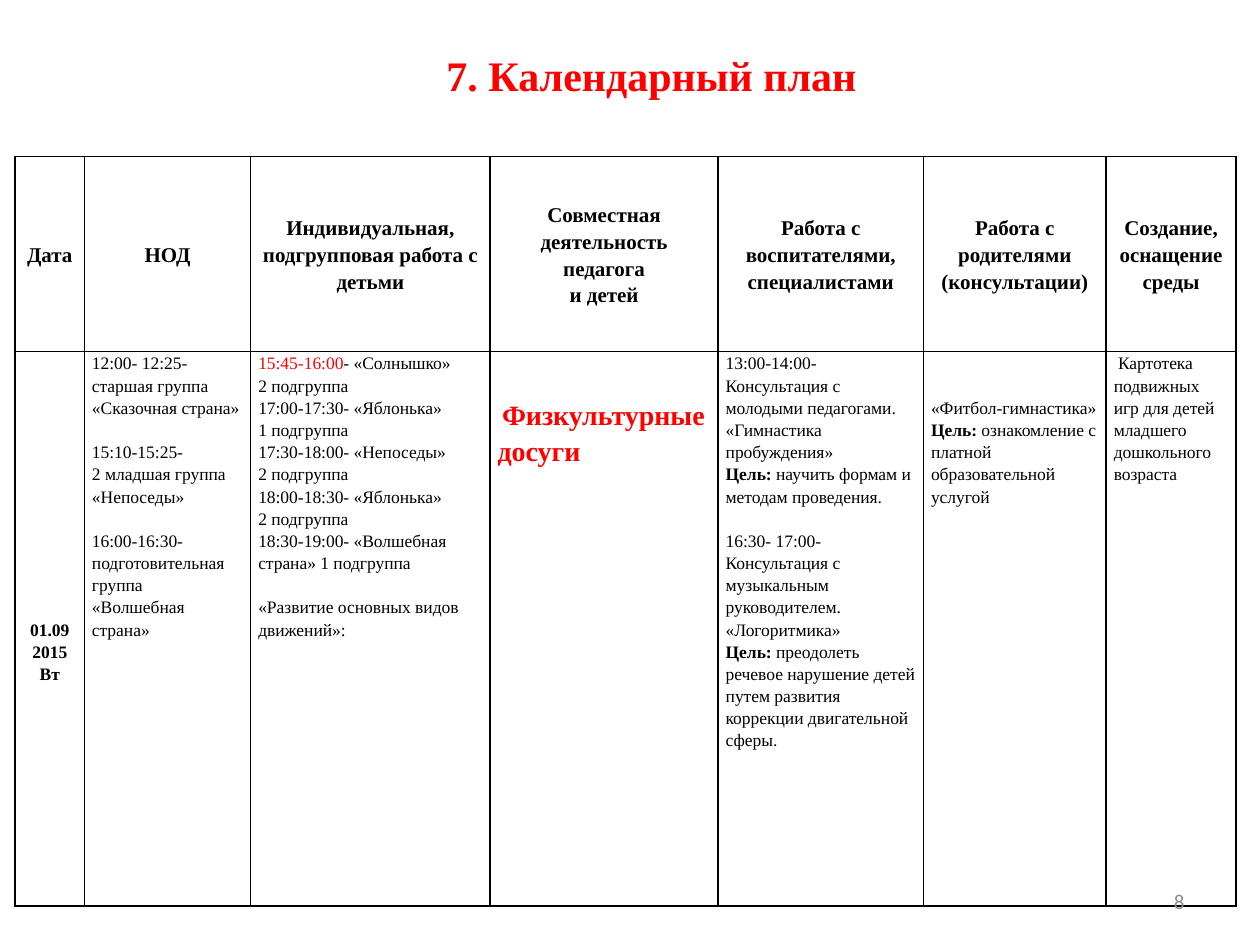
from dataclasses import dataclass, field

from lxml.etree import SubElement
from pptx import Presentation
from pptx.dml.color import RGBColor
from pptx.enum.text import MSO_ANCHOR as Anchor, PP_ALIGN as Align
from pptx.oxml.ns import qn
from pptx.util import Inches, Pt

RED = RGBColor(0xFF, 0x00, 0x00)
BLACK = RGBColor(0x00, 0x00, 0x00)
WHITE = RGBColor(0xFF, 0xFF, 0xFF)
GRAY = RGBColor(0x8C, 0x8C, 0x8C)

SERIF = "Times New Roman"
LINE = 12.7  # points taken by one line of table text
SPACING = 1.15

COLUMNS = [0.55, 1.32, 1.9, 1.81, 1.63, 1.45, 1.03]
ROWS = [1.55, 4.4]


@dataclass
class Line:
    """One paragraph: runs of (text, format), lines of gap above, first-line indent."""
    runs: list
    gap: int = 0
    indent: float = 0


@dataclass
class Entry:
    """One table cell: its paragraphs, the lines left free on top, its format."""
    lines: list
    skip: int = 0
    anchor: Anchor = Anchor.TOP
    align: Align = Align.LEFT
    font: dict = field(default_factory=lambda: {"size": Pt(10), "bold": False})


def plain(text, gap=0, indent=0):
    return Line([(text, {})], gap, indent)


def goal(text):
    return Line([("Цель:", {"bold": True}), (" " + text, {})])


def heading(*texts):
    return Entry([plain(text) for text in texts], anchor=Anchor.MIDDLE,
                 align=Align.CENTER, font={"size": Pt(12), "bold": True})


HEADINGS = [
    heading("Дата"),
    heading("НОД"),
    heading("Индивидуальная, подгрупповая работа с детьми"),
    heading("Совместная деятельность педагога", "и детей"),
    heading("Работа с воспитателями, специалистами"),
    heading("Работа с родителями", "(консультации)"),
    heading("Создание, оснащение", "среды"),
]

DAY = [
    Entry([plain("01.09"), plain("2015"), plain("Вт")], skip=2, anchor=Anchor.MIDDLE,
          align=Align.CENTER, font={"size": Pt(10), "bold": True}),
    Entry([
        plain("12:00- 12:25-"),
        plain("старшая группа"),
        plain("«Сказочная страна»"),
        plain("15:10-15:25-", gap=1),
        plain("2 младшая группа «Непоседы»"),
        plain("16:00-16:30-", gap=1),
        plain("подготовительная группа"),
        plain("«Волшебная страна»"),
    ]),
    Entry([
        Line([("15:45-16:00", {"color": RED}), ("- «Солнышко»", {})]),
        plain("2 подгруппа"),
        plain("17:00-17:30- «Яблонька»"),
        plain("1 подгруппа"),
        plain("17:30-18:00- «Непоседы»"),
        plain("2 подгруппа"),
        plain("18:00-18:30- «Яблонька»"),
        plain("2 подгруппа"),
        plain("18:30-19:00- «Волшебная"),
        plain("страна» 1 подгруппа"),
        plain("«Развитие основных видов движений»:", gap=1),
    ]),
    Entry([plain("Физкультурные досуги", indent=2.5)], skip=2,
          font={"size": Pt(16), "bold": True, "color": RED}),
    Entry([
        plain("13:00-14:00- Консультация с молодыми педагогами."),
        plain("«Гимнастика пробуждения»"),
        goal("научить формам и методам проведения."),
        plain("16:30- 17:00- Консультация с музыкальным руководителем.", gap=1),
        plain("«Логоритмика»"),
        goal("преодолеть речевое нарушение детей путем развития "
             "коррекции двигательной сферы."),
    ]),
    Entry([
        plain("«Фитбол-гимнастика»"),
        goal("ознакомление с платной образовательной услугой"),
    ], skip=2),
    Entry([
        plain("Картотека", indent=2.5),
        plain("подвижных игр для детей младшего"),
        plain("дошкольного"),
        plain("возраста"),
    ]),
]


def set_all(target, values):
    for name, value in values.items():
        setattr(target, name, value)


def add_run(paragraph, text, values):
    values = {"name": SERIF, "color": BLACK, **values}
    run = paragraph.add_run()
    run.text = text
    run.font.color.rgb = values.pop("color")
    set_all(run.font, values)


def add_borders(cell):
    properties = cell._tc.get_or_add_tcPr()
    for position, side in enumerate(("a:lnL", "a:lnR", "a:lnT", "a:lnB")):
        border = properties.makeelement(qn(side), {"w": str(Pt(1))})
        color = SubElement(SubElement(border, qn("a:solidFill")), qn("a:srgbClr"))
        color.set("val", str(BLACK))
        properties.insert(position, border)


def fill_cell(cell, entry):
    set_all(cell, {
        "margin_left": Inches(0.06), "margin_right": Inches(0.06),
        "margin_top": Pt(entry.skip * LINE), "margin_bottom": 0,
        "vertical_anchor": entry.anchor,
    })
    cell.fill.solid()
    cell.fill.fore_color.rgb = WHITE
    add_borders(cell)
    frame = cell.text_frame
    for number, line in enumerate(entry.lines):
        paragraph = frame.add_paragraph() if number else frame.paragraphs[0]
        set_all(paragraph, {"alignment": entry.align, "line_spacing": SPACING})
        if line.gap:
            paragraph.space_before = Pt(line.gap * LINE)
        if line.indent:
            paragraph._p.get_or_add_pPr().set("indent", str(Pt(line.indent)))
        for text, values in line.runs:
            add_run(paragraph, text, {**entry.font, **values})


def place_title(slide, left, top, width, height):
    title = slide.shapes.title
    set_all(title, {"left": left, "top": top, "width": width, "height": height})
    title.text_frame.vertical_anchor = Anchor.MIDDLE
    paragraph = title.text_frame.paragraphs[0]
    paragraph.alignment = Align.CENTER
    add_run(paragraph, "7. Календарный план",
            {"size": Pt(24), "bold": True, "color": RED})


def place_plan(slide, left, top, width, height):
    table = slide.shapes.add_table(len(ROWS), len(COLUMNS), left, top, width, height).table
    set_all(table, {"first_row": False, "horz_banding": False})
    for column, share in zip(table.columns, COLUMNS):
        column.width = int(width * share / sum(COLUMNS))
    for row, share, entries in zip(table.rows, ROWS, (HEADINGS, DAY)):
        row.height = int(height * share / sum(ROWS))
        for cell, entry in zip(row.cells, entries):
            fill_cell(cell, entry)


def place_page_number(slide, left, top, width, height):
    frame = slide.shapes.add_textbox(left, top, width, height).text_frame
    set_all(frame, {"word_wrap": True, "vertical_anchor": Anchor.MIDDLE})
    paragraph = frame.paragraphs[0]
    paragraph.alignment = Align.RIGHT
    add_run(paragraph, "8", {"name": "Calibri", "size": Pt(12), "color": GRAY})


def main():
    presentation = Presentation()
    set_all(presentation, {"slide_width": Inches(10), "slide_height": Inches(7.5)})
    slide = presentation.slides.add_slide(presentation.slide_layouts[5])
    place_title(slide, Inches(0.67), Inches(-0.03), Inches(9), Inches(1.25))
    place_plan(slide, Inches(0.12), Inches(1.24), Inches(sum(COLUMNS)), Inches(sum(ROWS)))
    place_page_number(slide, Inches(7.17), Inches(6.95), Inches(2.33), Inches(0.4))
    presentation.save("out.pptx")


if __name__ == "__main__":
    main()
